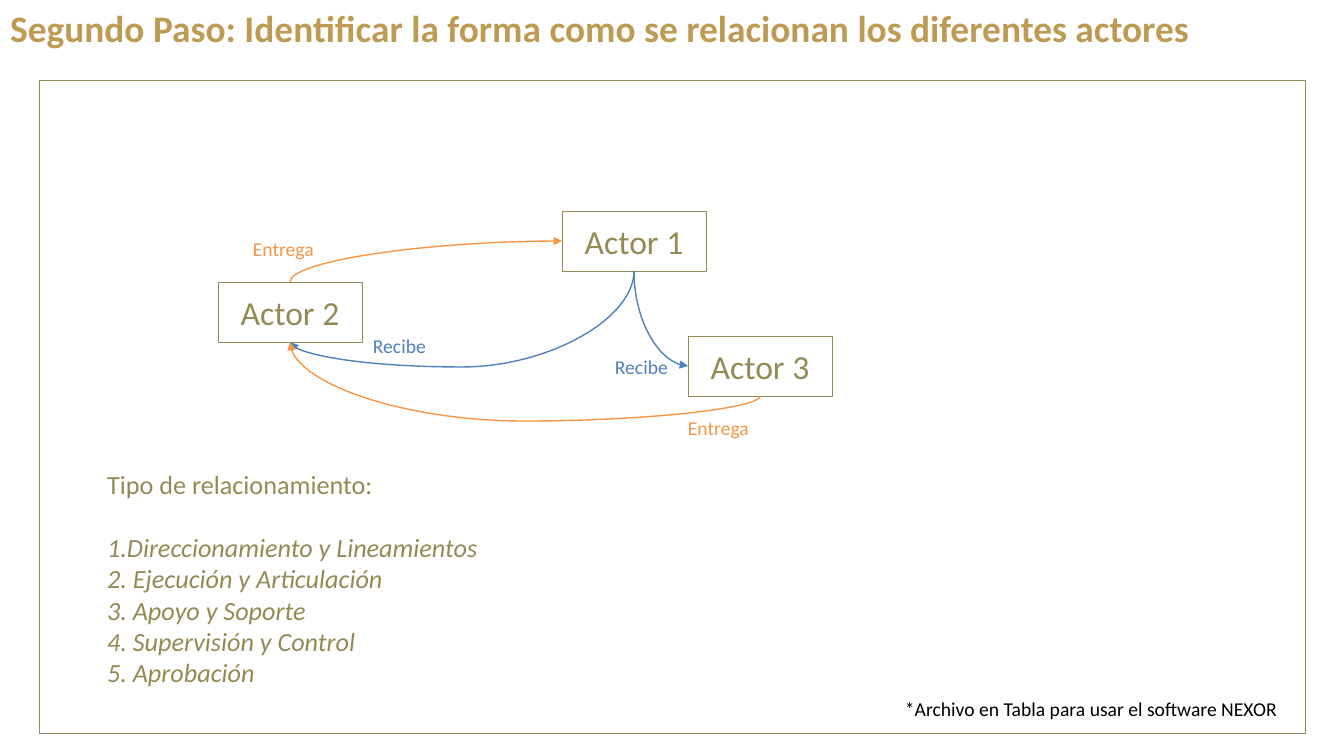
from pptx import Presentation
from pptx import util as u
from pptx.dml.color import RGBColor
from pptx.enum import shapes, text
from pptx.oxml.ns import qn
from lxml import etree

PX = 914400 / 100.8
GOLD, OLIVE, BLUE, ORANGE, BLACK = "BD9B53", "948A54", "4F81BD", "F79646", "000000"
BOX_W, BOX_H, BEND = 144, 60, 25


def px(n):
    return u.Emu(round(n * PX))


def rgb(value):
    return RGBColor.from_string(value)


class Slide:
    font = "Calibri"

    def __init__(self, prs):
        self.s = prs.slides.add_slide(prs.slide_layouts[1])

    def set_text(self, sp, lines, size, color, align=text.PP_ALIGN.LEFT,
                 anchor=text.MSO_ANCHOR.TOP, wrap=False, bold=False):
        tf = sp.text_frame
        tf.text = "\n".join(lines)
        tf.auto_size = text.MSO_AUTO_SIZE.NONE
        tf.word_wrap = wrap
        tf.vertical_anchor = anchor
        for p in tf.paragraphs:
            p.alignment = align
            p.space_before = u.Pt(0)
            for r in p.runs:
                r.font.name = self.font
                r.font.size = u.Pt(size)
                r.font.bold = bold
                r.font.color.rgb = rgb(color)
        return tf

    def place(self, sp, x, y, w, h):
        sp.left, sp.top, sp.width, sp.height = map(px, (x, y, w, h))
        return sp

    def title(self, line, x, y, w, h):
        sp = self.place(self.s.shapes.title, x, y, w, h)
        self.set_text(sp, [line], 26.7, GOLD, text.PP_ALIGN.JUSTIFY, wrap=True, bold=True)

    def body(self, heading, items, x, y, w, h):
        sp = self.place(self.s.placeholders[1], x, y, w, h)
        tf = self.set_text(sp, [heading] + items, 18.7, OLIVE)
        for p in tf.paragraphs:
            pPr = p._p.get_or_add_pPr()
            pPr.set("marL", "0")
            pPr.set("indent", "0")
            etree.SubElement(pPr, qn("a:buNone"))
        for p in tf.paragraphs[1:]:
            p.runs[0].font.italic = True
        tf.paragraphs[1].space_before = u.Pt(22.5)

    def label(self, line, color, x, y, w, h=34):
        sp = self.s.shapes.add_textbox(*map(px, (x, y, w, h)))
        self.set_text(sp, [line], 14, color)

    def box(self, x, y, w, h):
        sp = self.s.shapes.add_shape(shapes.MSO_SHAPE.RECTANGLE, *map(px, (x, y, w, h)))
        sp.shadow.inherit = False
        sp.fill.background()
        sp.line.color.rgb = rgb(OLIVE)
        sp.line.width = u.Pt(0.5)
        return sp

    def actor(self, name, x, y):
        sp = self.box(x, y, BOX_W, BOX_H)
        self.set_text(sp, [name], 24, OLIVE, text.PP_ALIGN.CENTER, text.MSO_ANCHOR.MIDDLE)
        mid = x + BOX_W // 2
        return {"top": (mid, y), "left": (x, y + BOX_H // 2), "bottom": (mid, y + BOX_H)}

    def curve(self, start, end, color, bend=None):
        (x1, y1), (x2, y2) = start, end
        cx, cy = (x1 + x2) / 2, (y1 + y2) / 2
        half_w, half_h = (y2 - y1) / 2, (x1 - x2) / 2
        c = self.s.shapes.add_connector(
            shapes.MSO_CONNECTOR.CURVE,
            px(cx - half_w), px(cy - half_h), px(cx + half_w), px(cy + half_h))
        c.line.color.rgb = rgb(color)
        c.line.width = u.Pt(1)
        spPr = c._element.spPr
        spPr.find(qn("a:xfrm")).set("rot", "5400000")
        geom = spPr.find(qn("a:prstGeom"))
        if bend is None:
            geom.set("prst", "curvedConnector2")
        else:
            av = geom.find(qn("a:avLst"))
            if av is None:
                av = etree.SubElement(geom, qn("a:avLst"))
            ratio = round((max(y1, y2) + bend - y1) / (y2 - y1) * 100000)
            etree.SubElement(av, qn("a:gd"), name="adj1", fmla=f"val {ratio}")
        etree.SubElement(spPr.find(qn("a:ln")), qn("a:tailEnd"), type="triangle")
        etree.SubElement(spPr, qn("a:effectLst"))


def main():
    prs = Presentation()
    prs.slide_width, prs.slide_height = px(1344), px(756)
    s = Slide(prs)
    s.title("Segundo Paso: Identificar la forma como se relacionan los diferentes actores",
            0, 0, 1333, 55)
    s.box(39, 80, 1266, 653)
    s.body("Tipo de relacionamiento:",
           ["1.Direccionamiento y Lineamientos", "2. Ejecución y Articulación",
            "3. Apoyo y Soporte", "4. Supervisión y Control", "5. Aprobación"],
           97, 463, 399, 232)

    actor3 = s.actor("Actor 3", 688, 336)
    actor2 = s.actor("Actor 2", 218, 282)
    actor1 = s.actor("Actor 1", 562, 211)

    s.curve(actor1["bottom"], actor2["bottom"], BLUE, BEND)
    s.curve(actor2["top"], actor1["left"], ORANGE)
    s.curve(actor1["bottom"], actor3["left"], BLUE)
    s.curve(actor3["bottom"], actor2["bottom"], ORANGE, BEND)

    for x, y in ((363, 329), (605, 350)):
        s.label("Recibe", BLUE, x, y, 74)
    for x, y in ((678, 411), (243, 232)):
        s.label("Entrega", ORANGE, x, y, 82)
    s.label("*Archivo en Tabla para usar el software NEXOR", BLACK, 895, 692, 403)

    prs.save("out.pptx")


if __name__ == "__main__":
    main()
